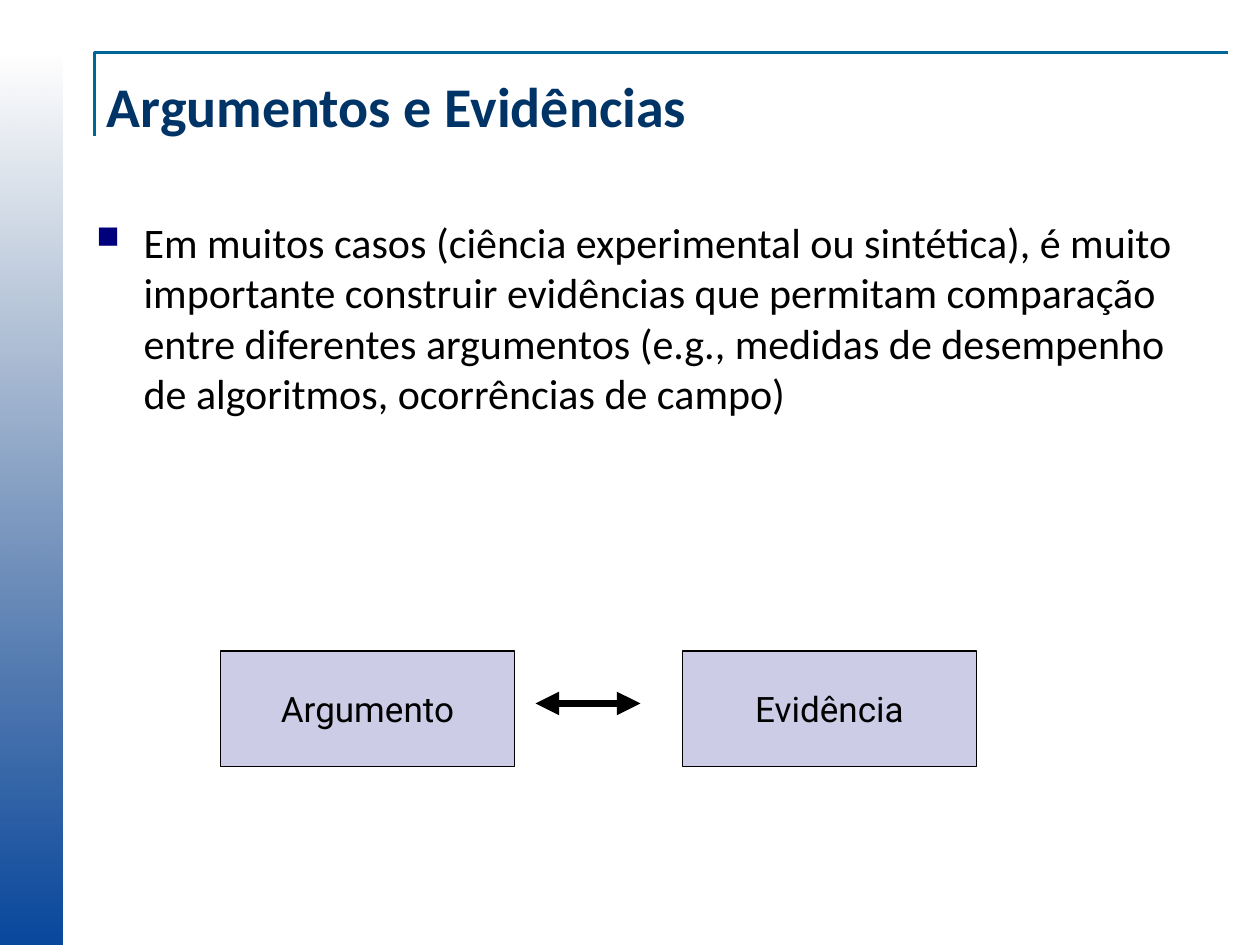
"""Build the slide on arguments and evidence."""
from lxml import etree
from pptx import Presentation
from pptx.dml.color import RGBColor
from pptx.enum.shapes import MSO_CONNECTOR, MSO_SHAPE
from pptx.enum.text import MSO_ANCHOR, PP_ALIGN
from pptx.oxml.ns import qn
from pptx.util import Pt

RECT = MSO_SHAPE.RECTANGLE
STRAIGHT = MSO_CONNECTOR.STRAIGHT
TOP, MIDDLE = MSO_ANCHOR.TOP, MSO_ANCHOR.MIDDLE
LEFT, CENTER = PP_ALIGN.LEFT, PP_ALIGN.CENTER

COLORS = {"bar": "08479C", "fade": "063370", "rule": "006699", "title": "003366",
          "bullet": "00007D", "box": "CCCCE6", "black": "000000"}

TITLE = "Argumentos e Evidências"
BODY = ("Em muitos casos (ciência experimental ou sintética), é muito importante "
        "construir evidências que permitam comparação entre diferentes argumentos "
        "(e.g., medidas de desempenho de algoritmos, ocorrências de campo)")
BOXES = ["Argumento", "Evidência"]

BOX_LEFT, BOX_TOP, BOX_W, BOX_H, BOX_STEP = 126, 372, 168, 66, 264
ARROW_START, ARROW_END, ARROW_Y = 306, 366, 402


def rgb(name):
    return RGBColor.from_string(COLORS[name])


def add_element(parent, tag, **attrs):
    return etree.SubElement(parent, qn(tag), attrs)


def write(s, text, size, font="Calibri", color="black", bold=False,
          align=LEFT, anchor=TOP, wrap=True, bullet=False):
    tf = s.text_frame
    tf.word_wrap = wrap
    tf.vertical_anchor = anchor
    p = tf.paragraphs[0]
    p.alignment = align
    if bullet:
        pPr = p._p.get_or_add_pPr()
        pPr.set("marL", str(Pt(27)))
        pPr.set("indent", str(-Pt(27)))
        add_element(add_element(pPr, "a:buClr"), "a:srgbClr", val=COLORS["bullet"])
        add_element(pPr, "a:buSzPct", val="75000")
        add_element(pPr, "a:buChar", char="■")
    r = p.add_run()
    r.text = text
    r.font.name = font
    r.font.size = Pt(size)
    r.font.bold = bold
    r.font.color.rgb = rgb(color)


prs = Presentation()
prs.slide_width, prs.slide_height = Pt(720), Pt(540)
shapes = prs.slides.add_slide(prs.slide_layouts[6]).shapes

bar = shapes.add_shape(RECT, Pt(0), Pt(30), Pt(36), Pt(510))
bar.shadow.inherit = False
bar.line.fill.background()
bar.fill.gradient()
bar.fill.gradient_angle = 90
for stop, name in zip(bar.fill.gradient_stops, ["bar", "fade"]):
    stop.color.rgb = rgb(name)
add_element(list(bar._element.iter(qn("a:srgbClr")))[-1], "a:alpha", val="0")

builder = shapes.build_freeform(Pt(54), Pt(78))
builder.add_line_segments([(Pt(54), Pt(30)), (Pt(702), Pt(30))], close=False)
rule = builder.convert_to_shape()
rule.shadow.inherit = False
rule.fill.background()
rule.line.color.rgb = rgb("rule")
rule.line.width = Pt(1.5)

title = shapes.add_textbox(Pt(54), Pt(30), Pt(642), Pt(60))
write(title, TITLE, 32, color="title", bold=True, anchor=MIDDLE)
body = shapes.add_textbox(Pt(48), Pt(120), Pt(648), Pt(198))
write(body, BODY, 24, bullet=True)

for i, label in enumerate(BOXES):
    s = shapes.add_shape(RECT, Pt(BOX_LEFT + i * BOX_STEP), Pt(BOX_TOP), Pt(BOX_W), Pt(BOX_H))
    s.shadow.inherit = False
    s.fill.solid()
    s.fill.fore_color.rgb = rgb("box")
    s.line.color.rgb = rgb("black")
    s.line.width = Pt(0.75)
    write(s, label, 20, font="Roboto", align=CENTER, anchor=MIDDLE, wrap=False)

arrow = shapes.add_connector(STRAIGHT, Pt(ARROW_START), Pt(ARROW_Y), Pt(ARROW_END), Pt(ARROW_Y))
arrow.line.color.rgb = rgb("black")
arrow.line.width = Pt(4.5)
for end in ["a:headEnd", "a:tailEnd"]:
    add_element(arrow.line._get_or_add_ln(), end, type="triangle")
add_element(arrow._element.spPr, "a:effectLst")

prs.save("out.pptx")
